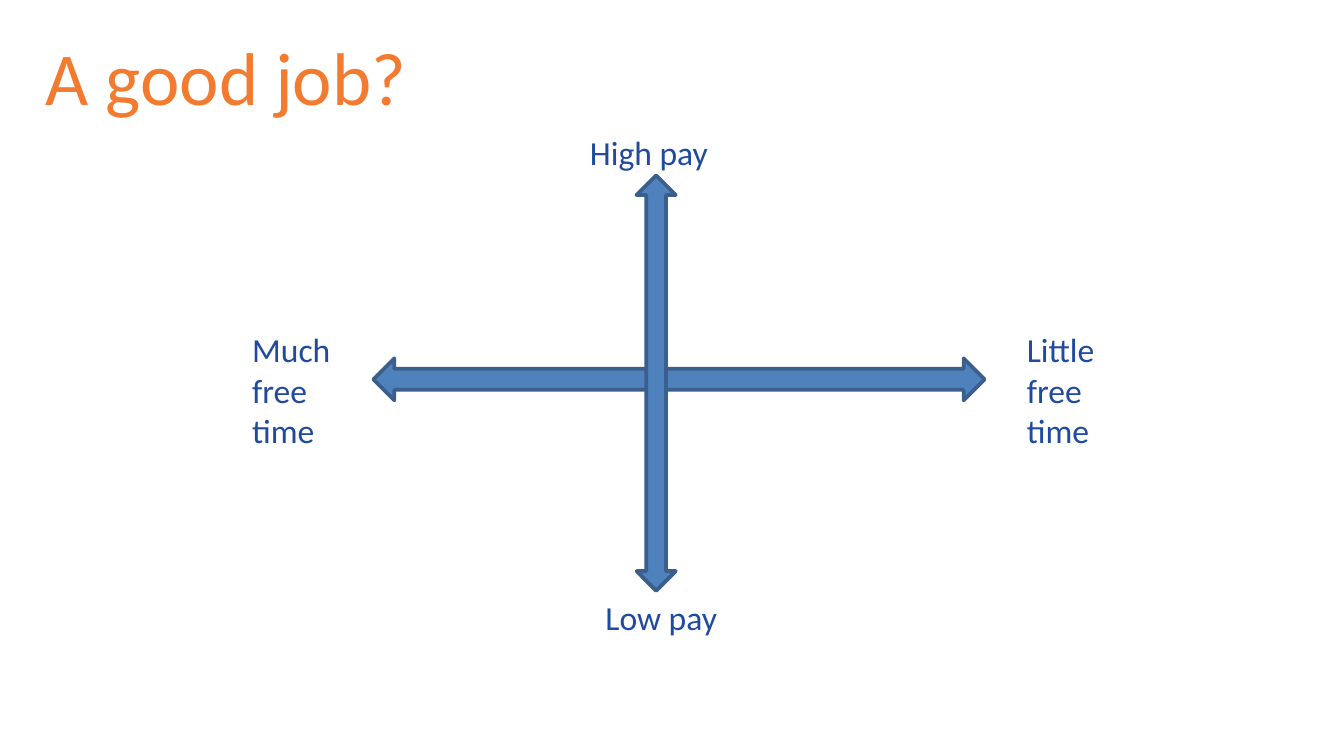
from dataclasses import dataclass

from pptx import Presentation
from pptx.dml.color import RGBColor
from pptx.enum.shapes import MSO_SHAPE
from pptx.enum.text import MSO_ANCHOR, MSO_AUTO_SIZE, PP_ALIGN
from pptx.util import Pt


@dataclass(frozen=True)
class Theme:
    font: str = "Calibri"
    title_size: int = 40
    label_size: int = 18
    title_color: str = "F27B30"
    label_color: str = "204A9E"
    arrow_fill: str = "4F81BD"
    arrow_line: str = "3A5F8C"


theme = Theme()


def write_text(shape, text, *, size, color):
    frame = shape.text_frame
    frame.text = text
    frame.word_wrap = True
    frame.auto_size = MSO_AUTO_SIZE.NONE
    frame.vertical_anchor = MSO_ANCHOR.TOP
    paragraph = frame.paragraphs[0]
    paragraph.alignment = PP_ALIGN.LEFT
    font = paragraph.runs[0].font
    font.name = theme.font
    font.size = Pt(size)
    font.color.rgb = RGBColor.from_string(color)


presentation = Presentation()
presentation.slide_width = Pt(720)
presentation.slide_height = Pt(405)
slide = presentation.slides.add_slide(presentation.slide_layouts[5])

# Title
title = slide.shapes.title
title.left, title.top, title.width, title.height = Pt(17.3), Pt(13), Pt(247), Pt(55.5)
write_text(title, "A good job?", size=theme.title_size, color=theme.title_color)

# Crossed axes: free time across, pay upwards
axes = [
    (MSO_SHAPE.LEFT_RIGHT_ARROW, 200, 192, 327.5, 22.5),
    (MSO_SHAPE.UP_DOWN_ARROW, 341, 94, 21, 222.5),
]
for preset, left, top, width, height in axes:
    arrow = slide.shapes.add_shape(preset, Pt(left), Pt(top), Pt(width), Pt(height))
    arrow.shadow.inherit = False
    arrow.fill.solid()
    arrow.fill.fore_color.rgb = RGBColor.from_string(theme.arrow_fill)
    arrow.line.color.rgb = RGBColor.from_string(theme.arrow_line)
    arrow.line.width = Pt(2)

# Labels at the ends of the axes
labels = [
    ("High pay", 309, 67, 89, 29),
    ("Low pay", 317.3, 316.3, 89, 29),
    ("Much free time", 128, 172.8, 60, 73),
    ("Little free time", 543, 172.8, 60, 73),
]
for text, left, top, width, height in labels:
    label = slide.shapes.add_textbox(Pt(left), Pt(top), Pt(width), Pt(height))
    write_text(label, text, size=theme.label_size, color=theme.label_color)

presentation.save("out.pptx")
